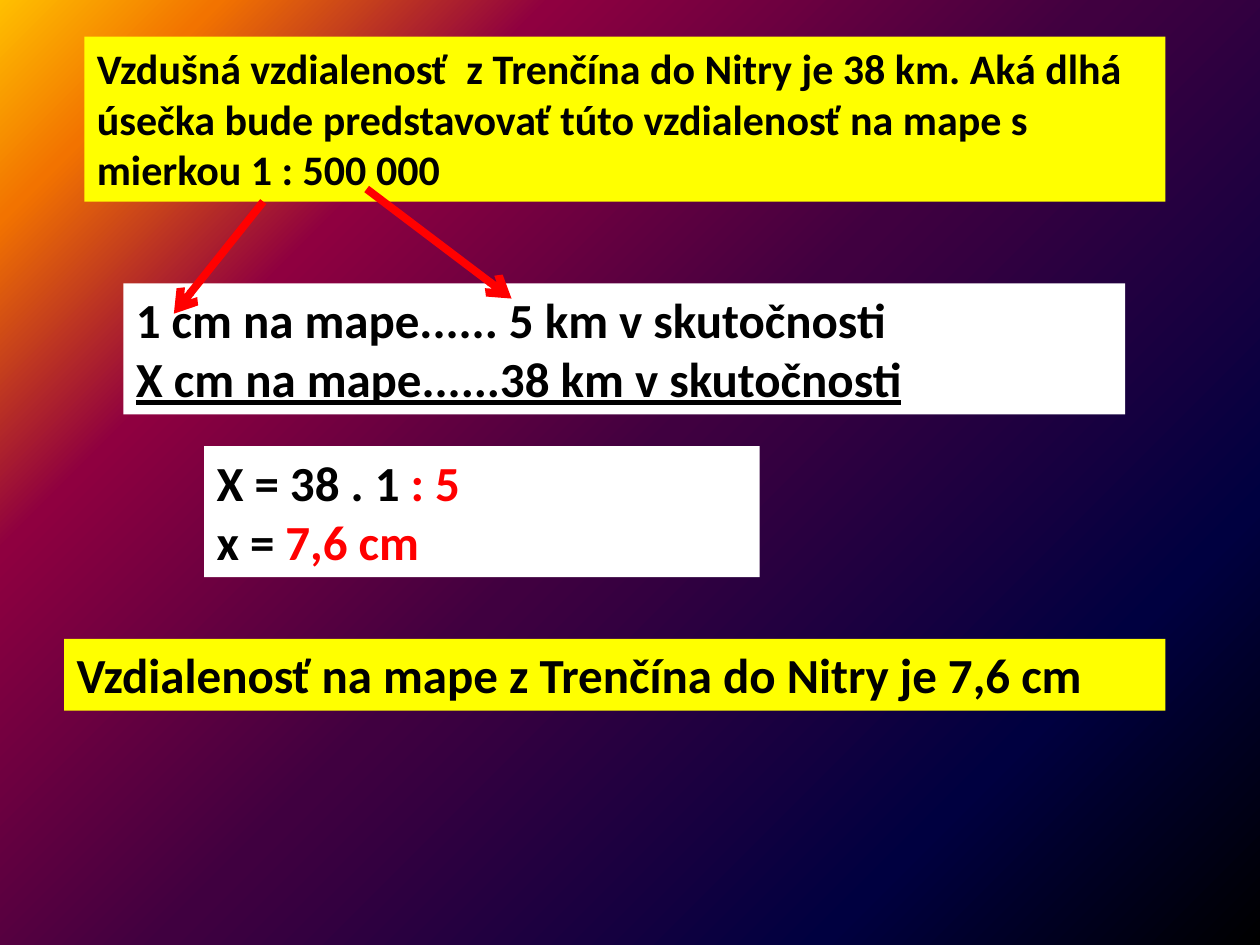
from lxml.etree import SubElement
from pptx import Presentation
from pptx.dml.color import RGBColor
from pptx.enum.shapes import MSO_CONNECTOR as Link
from pptx.enum.text import MSO_AUTO_SIZE as Fit
from pptx.oxml.ns import qn
from pptx.util import Inches, Pt

BLACK, WHITE, RED, YELLOW = "000000", "FFFFFF", "FF0000", "FFFF00"
STOPS = [(0, BLACK), (20, "000040"), (50, "400040"),
         (75, "8F0040"), (90, "F27300"), (100, "FFBF00")]


def color(code):
    return RGBColor.from_string(code)


def backdrop(slide):
    slide.background.fill.gradient()
    grad = slide.element.find(".//" + qn("a:gradFill"))
    for child in list(grad):
        grad.remove(child)
    stops = SubElement(grad, qn("a:gsLst"))
    for place, code in STOPS:
        stop = SubElement(stops, qn("a:gs"), pos=str(place * 1000))
        SubElement(stop, qn("a:srgbClr"), val=code)
    sweep = SubElement(grad, qn("a:path"), {"path": "circle"})
    SubElement(sweep, qn("a:fillToRect"), l="100000", t="100000")


def panel(slide, box, fill, size, lines):
    shape = slide.shapes.add_textbox(*map(Inches, box))
    shape.fill.solid()
    shape.fill.fore_color.rgb = color(fill)
    frame = shape.text_frame
    frame.word_wrap = True
    frame.auto_size = Fit.SHAPE_TO_FIT_TEXT
    for i, runs in enumerate(lines):
        para = frame.add_paragraph() if i else frame.paragraphs[0]
        font = para.font
        font.name, font.size, font.bold = "Calibri", Pt(size), True
        for text, code in runs:
            run = para.add_run()
            run.text = text
            run.font.color.rgb = color(code)
    return frame


def arrow(slide, start, end):
    link = slide.shapes.add_connector(
        Link.STRAIGHT, *map(Inches, start + end))
    link.line.color.rgb = color(RED)
    link.line.width = Pt(4.5)
    SubElement(link.line._get_or_add_ln(), qn("a:tailEnd"), type="arrow")
    SubElement(link._element.spPr, qn("a:effectLst"))


def build():
    deck = Presentation()
    deck.slide_width, deck.slide_height = Inches(10), Inches(7.5)
    slide = deck.slides.add_slide(deck.slide_layouts[6])
    backdrop(slide)
    panel(slide, (0.67, 0.29, 8.58, 1.31), YELLOW, 24, [
        [("Vzdušná vzdialenosť  z Trenčína do Nitry je 38 km. "
          "Aká dlhá úsečka bude predstavovať túto vzdialenosť "
          "na mape s mierkou 1 : 500 000", BLACK)]])
    ratio = panel(slide, (0.98, 2.25, 7.95, 1.04), WHITE, 28, [
        [("1 cm na mape...... 5 km v skutočnosti", BLACK)],
        [("X cm na mape......38 km v skutočnosti", BLACK)]])
    ratio.paragraphs[1].runs[0].font.underline = True
    panel(slide, (1.62, 3.54, 4.41, 1.04), WHITE, 28, [
        [("X = 38 . 1 ", BLACK), (": 5", RED)],
        [("x = ", BLACK), ("7,6 cm", RED)]])
    panel(slide, (0.51, 5.07, 8.74, 0.57), YELLOW, 28, [
        [("Vzdialenosť na mape z Trenčína do Nitry je 7,6 cm", BLACK)]])
    arrow(slide, (2.09, 1.6), (1.38, 2.49))
    arrow(slide, (2.91, 1.5), (4.06, 2.37))
    deck.save("out.pptx")


if __name__ == "__main__":
    build()
